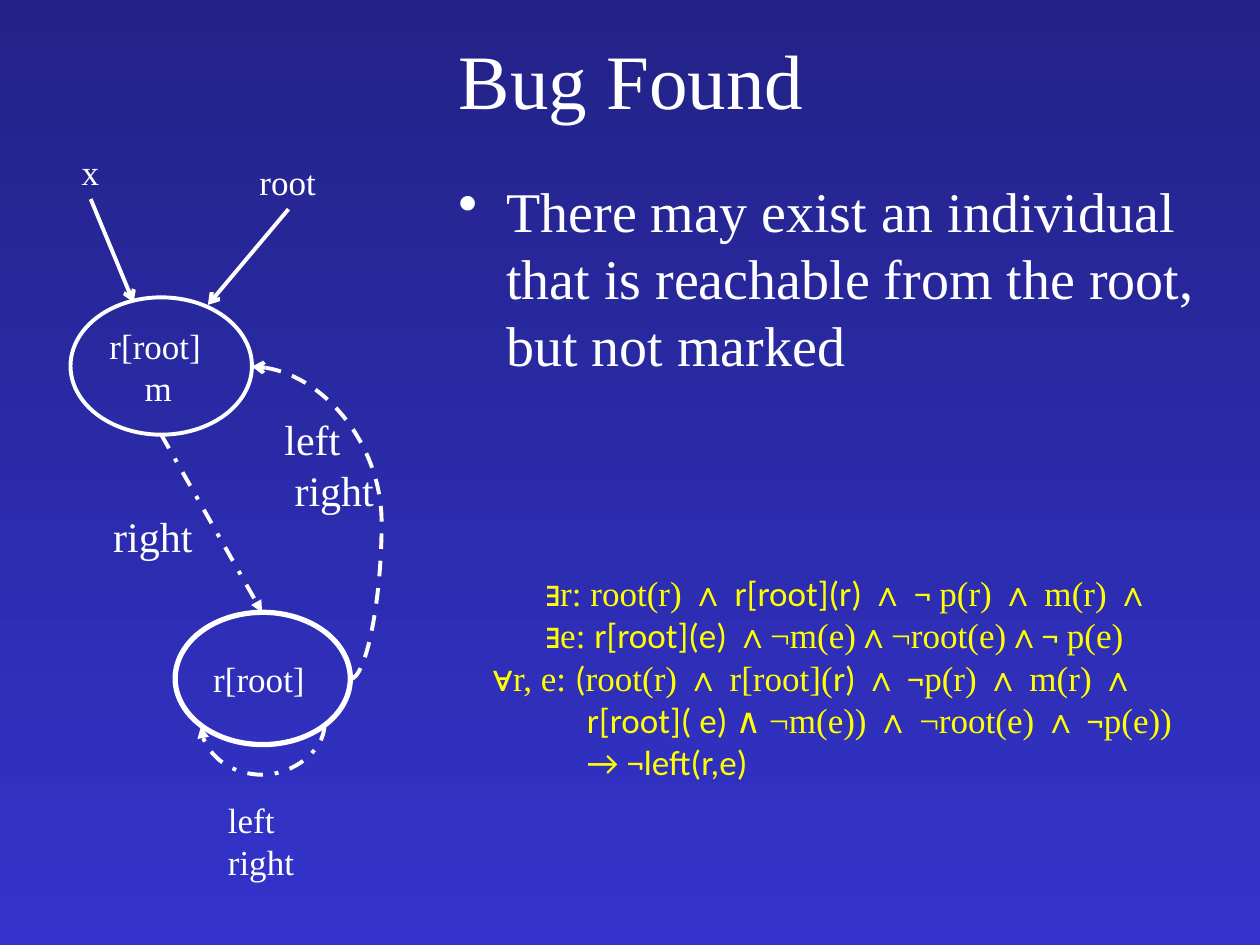
from lxml import etree
from pptx import Presentation
from pptx.dml.color import RGBColor
from pptx.enum.dml import MSO_LINE
from pptx.enum.shapes import MSO_CONNECTOR, MSO_SHAPE
from pptx.enum.text import MSO_ANCHOR, PP_ALIGN
from pptx.oxml.ns import qn
from pptx.util import Inches, Pt

LINE, CURVE = MSO_CONNECTOR.STRAIGHT, MSO_CONNECTOR.CURVE
DASH, DOT = MSO_LINE.DASH, MSO_LINE.DASH_DOT
TOP, MID = MSO_ANCHOR.TOP, MSO_ANCHOR.MIDDLE
LEFT, MIDDLE = PP_ALIGN.LEFT, PP_ALIGN.CENTER
WHITE, YELLOW = "FFFFFF", "FFFF00"
SERIF, SANS = "Times New Roman", "Calibri"


def color(code):
    return RGBColor.from_string(code)


def write(shape, lines, size, anchor=TOP, align=LEFT):
    """Fill a shape with (indent, text) lines."""
    frame = shape.text_frame
    frame.word_wrap = True
    frame.vertical_anchor = anchor
    for i, (indent, text) in enumerate(lines):
        para = frame.add_paragraph() if i else frame.paragraphs[0]
        para.text = text
        para.alignment = align
        para.font.size = Pt(size)
        para.font.name = SERIF
        para.font.color.rgb = color(WHITE)
        if indent:
            para._p.get_or_add_pPr().set("marL", str(Inches(indent)))
    return frame


prs = Presentation()
prs.slide_width, prs.slide_height = Inches(10), Inches(7.5)
slide = prs.slides.add_slide(prs.slide_layouts[6])
shapes = slide.shapes

# Background
fill = slide.background.fill
fill.gradient()
fill.gradient_angle = 270
for stop, code, spot in zip(fill.gradient_stops, ("222287", "3333CC"), (0, 1)):
    stop.color.rgb = color(code)
    stop.position = spot

# Formula: runs alternate between serif and sans, starting with serif
formula = [
    (0.42, ["∃r: root(r) ∧ ", "r[root](r) ", "∧ ", "¬ ", "p(r) ∧ m(r) ∧"]),
    (0.42, ["∃e: ", "r[root](e) ", "∧¬m(e)∧¬root(e)∧", "¬ ", "p(e)"]),
    (0, ["∀r, e: ", "(", "root(r) ∧ r[root](", "r) ", "∧", " ¬",
         "p(r) ∧ m(r) ∧"]),
    (0.75, ["", "r[root]( e) ∧ ", "¬m(e)) ∧ ¬root(e) ∧", " ¬", "p(e))"]),
    (0.75, ["", "→ ¬left(r,e)"]),
]
box = shapes.add_textbox(Inches(3.81), Inches(4.49), Inches(5.76), Inches(1.85))
frame = write(box, [(indent, "") for indent, _ in formula], 20)
for para, (_, parts) in zip(frame.paragraphs, formula):
    para.font.color.rgb = color(YELLOW)
    for i, part in enumerate(parts):
        if part:
            run = para.add_run()
            run.text = part
            run.font.size = Pt(20)
            run.font.name = SANS if i % 2 else SERIF
            run.font.color.rgb = color(YELLOW)

# Nodes
for x, y, w, h, width, lines in [
    (0.56, 2.36, 1.44, 1.09, 2.25, [(0, "r[root]"), (0.28, "m")]),
    (1.39, 4.86, 1.39, 1.05, 3, [(0, "r[root]")]),
]:
    node = shapes.add_shape(MSO_SHAPE.OVAL, Inches(x), Inches(y), Inches(w), Inches(h))
    node.shadow.inherit = False
    node.fill.background()
    node.line.color.rgb = color(WHITE)
    node.line.width = Pt(width)
    write(node, lines, 20, MID)

# Edges: kind, from, to, dash, head, curve adjustment, turn in degrees
for kind, start, end, dash, head, bend, turn in [
    (LINE, (0.72, 1.58), (1.06, 2.4), None, "arrow", None, 0),
    (LINE, (2.29, 1.66), (1.65, 2.42), None, "arrow", None, 0),
    (LINE, (1.28, 3.45), (2.08, 4.86), DOT, "triangle", None, 0),
    (CURVE, (2.78, 5.39), (2, 2.91), DASH, "arrow", -0.32, 0),
    (CURVE, (2.08, 5.27), (2.09, 6.25), DOT, "triangle", 40, 90),
]:
    edge = shapes.add_connector(kind, *map(Inches, start + end))
    edge.line.color.rgb = color(WHITE)
    edge.line.width = Pt(2.25)
    if dash:
        edge.line.dash_style = dash
    props = edge._element.spPr
    etree.SubElement(props.find(qn("a:ln")), qn("a:tailEnd"), type=head)
    etree.SubElement(props, qn("a:effectLst"))
    if turn:
        props.find(qn("a:xfrm")).set("rot", str(turn * 60000))
    if bend:
        geom = props.find(qn("a:prstGeom"))
        guides = geom.find(qn("a:avLst"))
        if guides is None:
            guides = etree.SubElement(geom, qn("a:avLst"))
        etree.SubElement(guides, qn("a:gd"), name="adj1",
                         fmla=f"val {round(bend * 100000)}")

# Labels and title
for x, y, w, h, size, anchor, align, lines in [
    (0.55, 1.15, 0.45, 0.43, 20, MID, LEFT, [(0, "x")]),
    (1.96, 1.22, 0.75, 0.44, 20, MID, LEFT, [(0, "root")]),
    (0.8, 4, 1.56, 0.51, 24, TOP, LEFT, [(0, "right")]),
    (2.16, 3.23, 1, 0.91, 24, MID, LEFT, [(0, "left"), (0.08, "right")]),
    (1.71, 6.29, 0.82, 0.77, 20, TOP, LEFT, [(0, "left"), (0, "right")]),
    (0.76, 0, 8.5, 1.25, 44, MID, MIDDLE, [(0, "Bug Found")]),
]:
    box = shapes.add_textbox(Inches(x), Inches(y), Inches(w), Inches(h))
    write(box, lines, size, anchor, align)

# Body bullet
box = shapes.add_textbox(Inches(3.54), Inches(1.35), Inches(6.29), Inches(2.54))
text = "There may exist an individual that is reachable from the root, but not marked"
para = write(box, [(0.38, text)], 32).paragraphs[0]
para.space_before = Pt(6.4)
marks = para._p.get_or_add_pPr()
marks.set("indent", str(-Inches(0.38)))
bullet = etree.Element(qn("a:buChar"), char="•")
marks.find(qn("a:defRPr")).addprevious(bullet)

prs.save("out.pptx")
